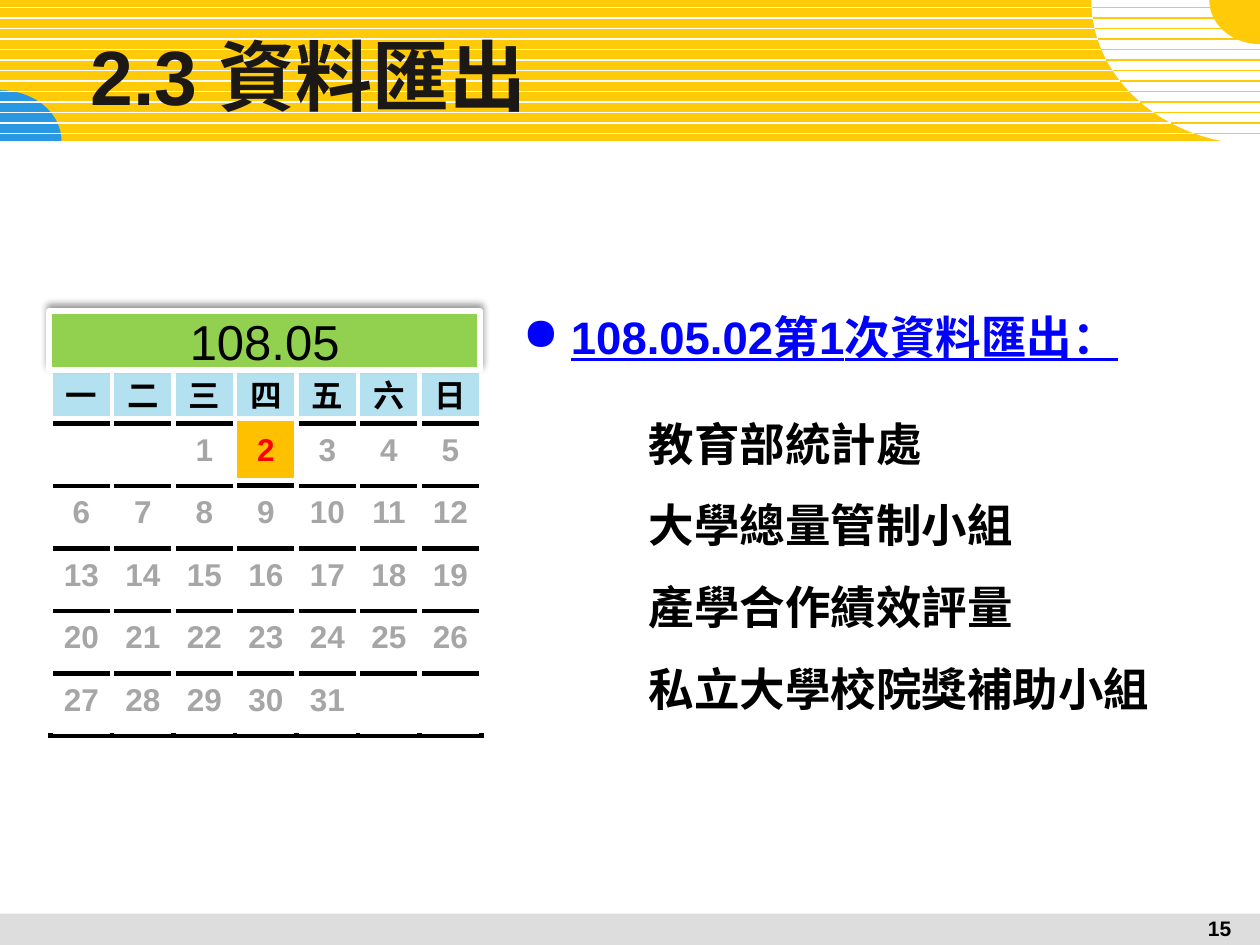
import math

import lxml.etree
import pptx
import pptx.dml.color
import pptx.enum.shapes
import pptx.enum.text
import pptx.oxml
import pptx.oxml.ns
import pptx.util

Cm = pptx.util.Cm
Pt = pptx.util.Pt
PP_ALIGN = pptx.enum.text.PP_ALIGN
ANCHOR = pptx.enum.text.MSO_ANCHOR
qn = pptx.oxml.ns.qn
NAMESPACE = pptx.oxml.ns.nsdecls("a")

WIDTH, HEIGHT = 25.4, 19.05
YELLOW, WHITE, BLUE, GRAY = "FFCA08", "FFFFFF", "2998E3", "DDDDDD"
BLACK, DATE_GRAY, RED, LINK_BLUE = "000000", "A6A6A6", "FF0000", "0000FF"


def color(hex_code):
    return pptx.dml.color.RGBColor.from_string(hex_code)


def shadow(hex_code, alpha, blur, distance, angle):
    return pptx.oxml.parse_xml(
        f'<a:effectLst {NAMESPACE}><a:outerShdw blurRad="{Pt(blur)}" dist="{Pt(distance)}"'
        f' dir="{angle * 60000}" algn="ctr" rotWithShape="0"><a:srgbClr val="{hex_code}">'
        f'<a:alpha val="{alpha * 1000}"/></a:srgbClr></a:outerShdw></a:effectLst>'
    )


class SlideBuilder:
    latin = "Arial"
    cjk = "Noto Sans CJK SC"

    def __init__(self, slide):
        self.slide = slide
        self.shapes = slide.shapes

    def paint(self, shape, fill):
        shape.shadow.inherit = False
        shape.fill.solid()
        shape.fill.fore_color.rgb = color(fill)
        shape.line.fill.background()
        return shape

    def rectangle(self, left, top, width, height, fill):
        kind = pptx.enum.shapes.MSO_SHAPE.RECTANGLE
        return self.paint(
            self.shapes.add_shape(kind, Cm(left), Cm(top), Cm(width), Cm(height)), fill
        )

    def quarter_ellipse(self, corner_x, corner_y, reach_x, reach_y, fill, steps=32):
        angles = [math.pi / 2 * step / steps for step in range(steps + 1)]
        arc = [
            (Cm(corner_x + reach_x * math.cos(a)), Cm(corner_y + reach_y * math.sin(a)))
            for a in angles
        ]
        outline = self.shapes.build_freeform(Cm(corner_x), Cm(corner_y))
        outline.add_line_segments(arc, close=True)
        return self.paint(outline.convert_to_shape(), fill)

    def stripe(self, start, end, y, stroke, weight):
        line = self.shapes.add_connector(
            pptx.enum.shapes.MSO_CONNECTOR.STRAIGHT, Cm(start), Cm(y), Cm(end), Cm(y)
        )
        line.line.color.rgb = color(stroke)
        line.line.width = Pt(weight)
        lxml.etree.SubElement(line._element.spPr, qn("a:effectLst"))

    def style(self, paragraph, size, hex_code, bold=True, underline=False, face=None):
        for run in paragraph.runs:
            run.font.name = face or self.latin
            run.font.size = Pt(size)
            run.font.bold = bold
            run.font.underline = underline
            run.font.color.rgb = color(hex_code)
            east_asian = lxml.etree.SubElement(run._r.get_or_add_rPr(), qn("a:ea"))
            east_asian.set("typeface", face or self.latin)

    def text_box(self, left, top, width, height, text, anchor=ANCHOR.TOP):
        frame = self.shapes.add_textbox(Cm(left), Cm(top), Cm(width), Cm(height)).text_frame
        frame.word_wrap = True
        frame.vertical_anchor = anchor
        frame.text = text
        return frame

    def indent(self, paragraph, left, first=0, bullet=None):
        properties = paragraph._p.get_or_add_pPr()
        properties.set("marL", str(Cm(left)))
        properties.set("indent", str(Cm(first)))
        if bullet:
            lxml.etree.SubElement(properties, qn("a:buChar")).set("char", bullet)

    def border(self, cell, stroke, weight):
        properties = cell._tc.get_or_add_tcPr()
        for side in ("lnL", "lnR", "lnT", "lnB"):
            properties.append(pptx.oxml.parse_xml(
                f'<a:{side} {NAMESPACE} w="{Pt(weight)}"><a:solidFill>'
                f'<a:srgbClr val="{stroke}"/></a:solidFill></a:{side}>'
            ))

    def date_cell(self, cell, text, hex_code, fill, face=None):
        cell.vertical_anchor = ANCHOR.MIDDLE
        cell.margin_left = cell.margin_right = cell.margin_top = Cm(0.03)
        cell.margin_bottom = 0
        self.border(cell, WHITE, 3)
        if fill:
            cell.fill.solid()
            cell.fill.fore_color.rgb = color(fill)
        else:
            cell.fill.background()
        label = cell.text_frame.paragraphs[0]
        label.text = text
        label.alignment = PP_ALIGN.CENTER
        self.style(label, 18, hex_code, face=face)

    def calendar(self, left, top, weekdays, first_column, days, marked):
        columns = len(weekdays)
        weeks = math.ceil((first_column + days) / columns)
        header_height, week_height, column_width = 1.01, 1.26, 1.24
        table = self.shapes.add_table(
            weeks + 1, columns, Cm(left), Cm(top),
            Cm(columns * column_width), Cm(header_height + weeks * week_height),
        ).table
        table.first_row = table.horz_banding = False
        table._tbl.tblPr.insert(0, shadow(BLACK, 100, 0, 3, 90))
        for column in table.columns:
            column.width = Cm(column_width)
        for index, row in enumerate(table.rows):
            row.height = Cm(week_height if index else header_height)
        for column, weekday in enumerate(weekdays):
            self.date_cell(table.cell(0, column), weekday, BLACK, "B3E1EF", self.cjk)
        for slot in range(weeks * columns):
            day = slot - first_column + 1
            week, column = divmod(slot, columns)
            self.date_cell(
                table.cell(week + 1, column),
                str(day) if 1 <= day <= days else "",
                RED if day == marked else DATE_GRAY,
                "FFC000" if day == marked else None,
            )

    def month_banner(self, left, top, width, height, text):
        banner = self.rectangle(left, top, width, height, "92D050")
        banner.line.color.rgb = color(WHITE)
        banner.line.width = Pt(3)
        properties = banner._element.spPr
        properties.replace(properties.find(qn("a:effectLst")), shadow(BLACK, 40, 4, 3, 270))
        banner.text_frame.text = text
        banner.text_frame.vertical_anchor = ANCHOR.MIDDLE
        month = banner.text_frame.paragraphs[0]
        month.alignment = PP_ALIGN.CENTER
        self.style(month, 28, BLACK, bold=False)


def main():
    deck = pptx.Presentation()
    deck.slide_width, deck.slide_height = Cm(WIDTH), Cm(HEIGHT)
    page = SlideBuilder(deck.slides.add_slide(deck.slide_layouts[6]))

    band_height, curve_x, curve_y = 2.84, 3.4, 2.92
    stripe_tops = [0.15 + 2.54 / 12 * step for step in range(13)]
    page.rectangle(0, 0, WIDTH, band_height, YELLOW)
    page.quarter_ellipse(0, band_height, 1.24, -1.02, BLUE)
    for y in stripe_tops:
        page.stripe(0, WIDTH, y, WHITE, 1)
    page.quarter_ellipse(WIDTH, 0, -curve_x, curve_y, WHITE)
    for y in stripe_tops:
        edge = WIDTH - curve_x * math.sqrt(1 - (y / curve_y) ** 2)
        page.stripe(edge, WIDTH, y, YELLOW, 0.75)
    page.rectangle(0, 18.42, WIDTH, 0.63, GRAY)
    page.quarter_ellipse(WIDTH, 0, -1.02, 0.89, YELLOW)

    page_number = page.text_box(23.77, 18.34, 1.63, 0.71, "15").paragraphs[0]
    page_number.alignment = PP_ALIGN.CENTER
    page.style(page_number, 12, BLACK)
    title = page.text_box(1.57, 0.66, 19.71, 1.7, "2.3 資料匯出", ANCHOR.MIDDLE)
    page.style(title.paragraphs[0], 44, "1C1815")

    recipients = ["教育部統計處", "大學總量管制小組", "產學合作績效評量", "私立大學校院獎補助小組"]
    export = page.text_box(
        10.29, 5.56, 14.3, 9.25, "\n".join(["108.05.02第1次資料匯出：", *recipients])
    )
    heading, *recipient_lines = export.paragraphs
    for paragraph in export.paragraphs:
        paragraph.line_spacing = 1.5
    recipient_lines[0].space_before = Pt(14)
    page.indent(heading, 0.97, -0.97, "●")
    page.style(heading, 26, LINK_BLUE, underline=True)
    for recipient in recipient_lines:
        page.indent(recipient, 2.54)
        page.style(recipient, 26, BLACK)

    page.calendar(1.02, 7.42, "一二三四五六日", first_column=2, days=31, marked=2)
    page.month_banner(0.99, 6.27, 8.69, 1.19, "108.05")
    deck.save("out.pptx")


if __name__ == "__main__":
    main()
